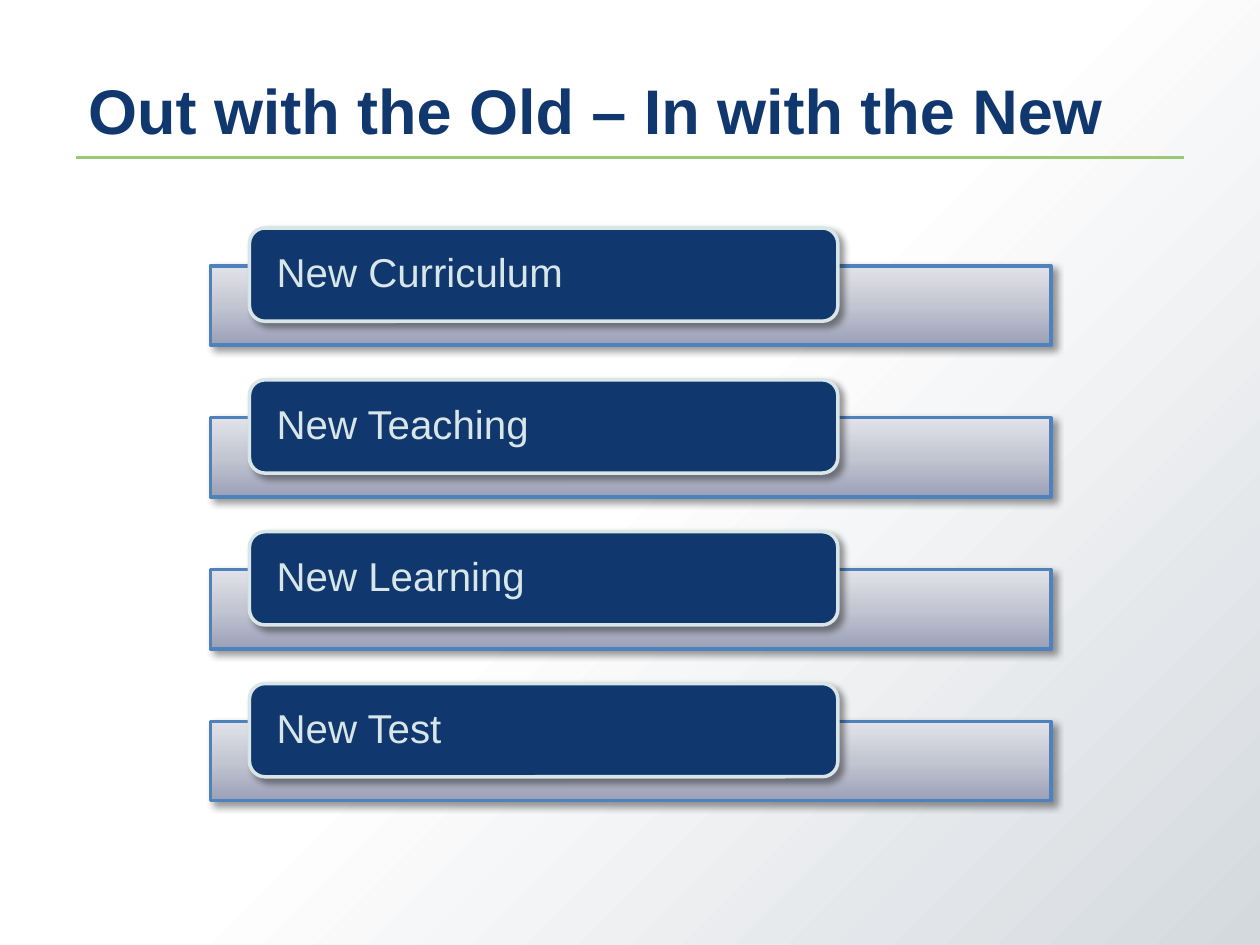
from lxml.etree import SubElement
from pptx import Presentation
from pptx.dml.color import RGBColor
from pptx.enum.shapes import MSO_CONNECTOR, MSO_SHAPE
from pptx.enum.text import MSO_ANCHOR, PP_ALIGN
from pptx.oxml import parse_xml
from pptx.oxml.ns import nsdecls, qn
from pptx.util import Inches, Pt

NAVY = RGBColor(0x11, 0x37, 0x6F)
GREEN = RGBColor(0x9B, 0xC8, 0x72)
BLUE = RGBColor(0x4F, 0x81, 0xBD)
PALE = RGBColor(0xD8, 0xE6, 0xE8)
WHITE = RGBColor(0xFF, 0xFF, 0xFF)
GREY = RGBColor(0xD4, 0xD9, 0xDE)
BAR_DARK = RGBColor(0x9A, 0xA0, 0xB7)
BAR_MID = RGBColor(0xC3, 0xC6, 0xD2)
BAR_LIGHT = RGBColor(0xE2, 0xE3, 0xE9)


def set_gradient(fill, parent, stops, angle):
    fill.gradient()
    fill.gradient_angle = angle
    gs_lst = next(parent.iter(qn("a:gsLst")))
    for gs in list(gs_lst):
        gs_lst.remove(gs)
    for position, color in stops:
        gs = SubElement(gs_lst, qn("a:gs"), pos=str(position * 1000))
        SubElement(gs, qn("a:srgbClr"), val=str(color))


def style_outline(sp, color):
    sp.line.color.rgb = color
    sp.line.width = Pt(2)
    sp._element.spPr.append(parse_xml(
        f'<a:effectLst {nsdecls("a")}>'
        f'<a:outerShdw blurRad="{Pt(4)}" dist="{Pt(3)}" dir="2700000" rotWithShape="0">'
        '<a:srgbClr val="000000"><a:alpha val="40000"/></a:srgbClr>'
        '</a:outerShdw></a:effectLst>'))


prs = Presentation()
prs.slide_width, prs.slide_height = Inches(10), Inches(7.5)
s = prs.slides.add_slide(prs.slide_layouts[5])
set_gradient(s.background.fill, s._element, [(50, WHITE), (100, GREY)], 315)

rule = s.shapes.add_connector(
    MSO_CONNECTOR.STRAIGHT, Inches(0.6), Inches(1.25), Inches(9.4), Inches(1.25))
rule.line.color.rgb = GREEN
rule.line.width = Pt(2)
SubElement(rule._element.spPr, qn("a:effectLst"))

title = s.shapes.title
title.left, title.top = Inches(0.6), Inches(0.6)
title.width, title.height = Inches(8.81), Inches(0.62)
tf = title.text_frame
tf.text = "Out with the Old – In with the New"
tf.vertical_anchor = MSO_ANCHOR.BOTTOM
p = tf.paragraphs[0]
p.alignment = PP_ALIGN.LEFT
pPr = p._p.get_or_add_pPr()
pPr.set("marL", str(Inches(0.5)))
pPr.set("indent", str(Inches(-0.5)))
font = p.runs[0].font
font.name, font.size, font.bold = "Arial", Pt(36), True
font.color.rgb = NAVY

for i, label in enumerate(["New Curriculum", "New Teaching", "New Learning", "New Test"]):
    top = 1.81 + i * 1.205
    group = s.shapes.add_group_shape()

    bar = group.shapes.add_shape(
        MSO_SHAPE.RECTANGLE, Inches(1.67), Inches(top + 0.3), Inches(6.67), Inches(0.63))
    set_gradient(bar.fill, bar._element,
                 [(0, BAR_DARK), (50, BAR_MID), (100, BAR_LIGHT)], 90)
    style_outline(bar, BLUE)

    tab = group.shapes.add_shape(
        MSO_SHAPE.ROUNDED_RECTANGLE, Inches(1.98), Inches(top), Inches(4.67), Inches(0.74))
    tab.fill.solid()
    tab.fill.fore_color.rgb = NAVY
    style_outline(tab, PALE)
    tf = tab.text_frame
    tf.text = label
    tf.word_wrap = True
    tf.vertical_anchor = MSO_ANCHOR.MIDDLE
    tf.margin_left = tf.margin_right = Inches(0.18)
    tf.margin_top = tf.margin_bottom = 0
    p = tf.paragraphs[0]
    p.alignment = PP_ALIGN.LEFT
    p.line_spacing = 0.9
    font = p.runs[0].font
    font.name, font.size = "Arial", Pt(23)
    font.color.rgb = PALE

prs.save("out.pptx")
